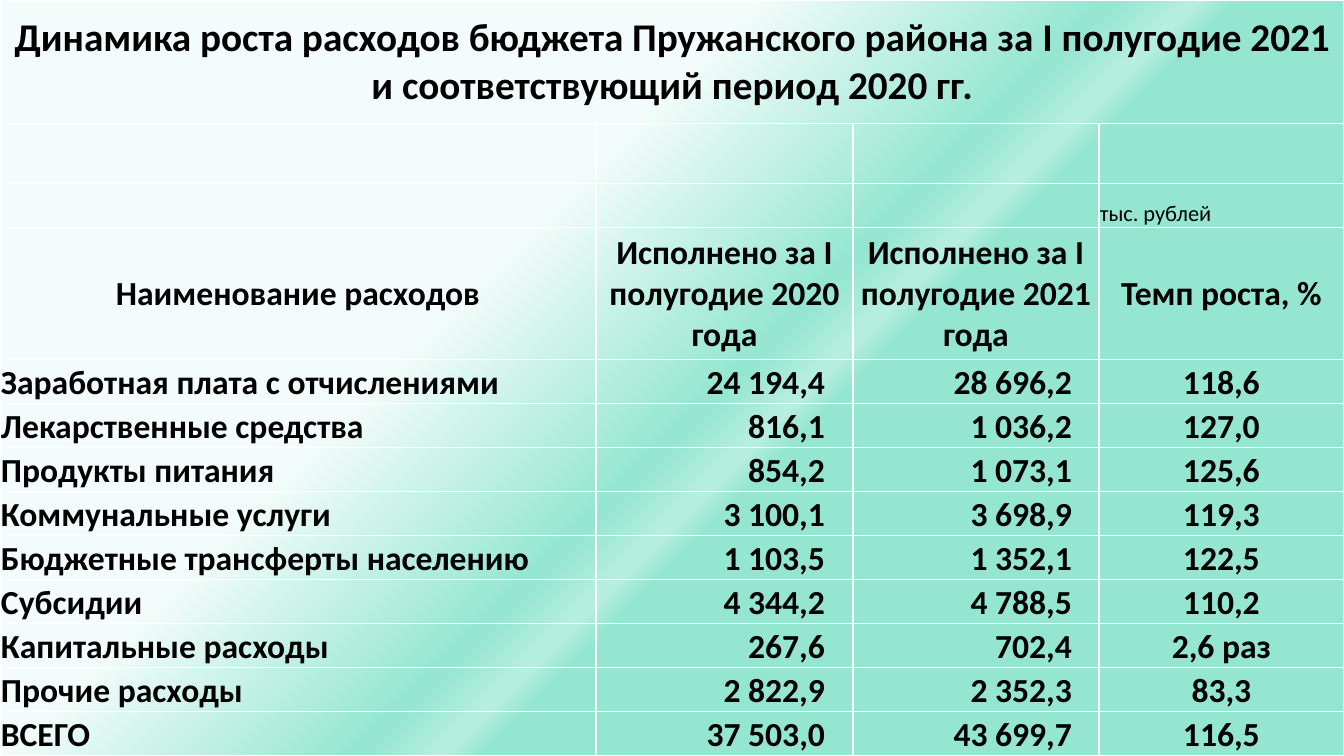
from lxml import etree
from pptx import Presentation
from pptx.dml.color import RGBColor
from pptx.enum.text import MSO_ANCHOR, PP_ALIGN
from pptx.oxml.ns import qn
from pptx.util import Pt

LEFT, MID, RIGHT = PP_ALIGN.LEFT, PP_ALIGN.CENTER, PP_ALIGN.RIGHT
CENTER, BOTTOM = MSO_ANCHOR.MIDDLE, MSO_ANCHOR.BOTTOM
WIDE, HIGH = 1344, 756
SCALE = 12192000 / WIDE
COLORS = {"text": "000000", "line": "FFFFFF", "pale": "F3FCFA",
          "mint": "94E6D0", "glow": "B8EEE0"}
STOPS = [(36, "pale"), (53, "mint"), (57, "glow"), (59, "mint")]
COLS = [596, 257, 246, 245]
ROWS = [123, 60, 44, 132] + [44] * 9
TITLE = ("Динамика роста расходов бюджета Пружанского района за I полугодие 2021 "
         "и соответствующий период 2020 гг.")
HEADS = ["Наименование расходов", "Исполнено за I полугодие 2020 года",
         "Исполнено за I полугодие 2021 года", "Темп роста, %"]
COSTS = [
    ("Заработная плата с отчислениями", "24 194,4", "28 696,2", "118,6"),
    ("Лекарственные средства", "816,1", "1 036,2", "127,0"),
    ("Продукты питания", "854,2", "1 073,1", "125,6"),
    ("Коммунальные услуги", "3 100,1", "3 698,9", "119,3"),
    ("Бюджетные трансферты населению", "1 103,5", "1 352,1", "122,5"),
    ("Субсидии", "4 344,2", "4 788,5", "110,2"),
    ("Капитальные расходы", "267,6", "702,4", "2,6 раз"),
    ("Прочие расходы", "2 822,9", "2 352,3", "83,3"),
    ("ВСЕГО", "37 503,0", "43 699,7", "116,5"),
]


def px(n):
    """Turn pixels into EMU."""
    return round(n * SCALE)


def paint(slide):
    """Lay the diagonal gradient on the slide background."""
    fill = slide.background.fill
    fill.gradient()
    fill.gradient_angle = 315
    stops = next(slide.element.iter(qn("a:gsLst")))
    for old in list(stops):
        stops.remove(old)
    for pos, name in STOPS:
        stop = etree.SubElement(stops, qn("a:gs"), pos=str(pos * 1000))
        etree.SubElement(stop, qn("a:srgbClr"), val=COLORS[name])


def frame(cell):
    """Clear the fill of a cell and rule its four sides."""
    cell.fill.background()
    props = cell._tc.get_or_add_tcPr()
    for i, side in enumerate(("lnL", "lnR", "lnT", "lnB")):
        line = etree.Element(qn("a:" + side), w=str(Pt(1)))
        solid = etree.SubElement(line, qn("a:solidFill"))
        etree.SubElement(solid, qn("a:srgbClr"), val=COLORS["line"])
        props.insert(i, line)


def write(cell, text, size=24, bold=True, align=MID, anchor=BOTTOM, right=1):
    """Put formatted text into a cell."""
    cell.margin_left = cell.margin_top = px(1)
    cell.margin_right, cell.margin_bottom = px(right), 0
    cell.vertical_anchor = anchor
    para = cell.text_frame.paragraphs[0]
    para.alignment = align
    run = para.add_run()
    run.text = text
    font = run.font
    font.name, font.size, font.bold = "Calibri", Pt(size), bold
    font.color.rgb = RGBColor.from_string(COLORS["text"])


def budget(slide, x, y, w, h):
    """Build the budget table in the given box."""
    table = slide.shapes.add_table(len(ROWS), len(COLS), px(x), px(y), px(w), px(h)).table
    table.first_row = table.horz_banding = False
    for col, size in zip(table.columns, COLS):
        col.width = px(size * w / sum(COLS))
    for row, size in zip(table.rows, ROWS):
        row.height = px(size * h / sum(ROWS))
    for cell in table.iter_cells():
        frame(cell)
    table.cell(0, 0).merge(table.cell(0, 3))
    write(table.cell(0, 0), TITLE, size=28, anchor=CENTER)
    write(table.cell(2, 3), "тыс. рублей", size=16, bold=False, align=LEFT)
    for c, head in enumerate(HEADS):
        write(table.cell(3, c), head, anchor=CENTER)
    aligns, pads = (LEFT, RIGHT, RIGHT, MID), (1, 28, 27, 1)
    for r, cost in enumerate(COSTS, 4):
        for c, text in enumerate(cost):
            write(table.cell(r, c), text, align=aligns[c], right=pads[c])


def main():
    """Build and save the slide."""
    deck = Presentation()
    deck.slide_width, deck.slide_height = px(WIDE), px(HIGH)
    slide = deck.slides.add_slide(deck.slide_layouts[6])
    paint(slide)
    budget(slide, 0, 0, WIDE, HIGH)
    deck.save("out.pptx")


if __name__ == "__main__":
    main()
